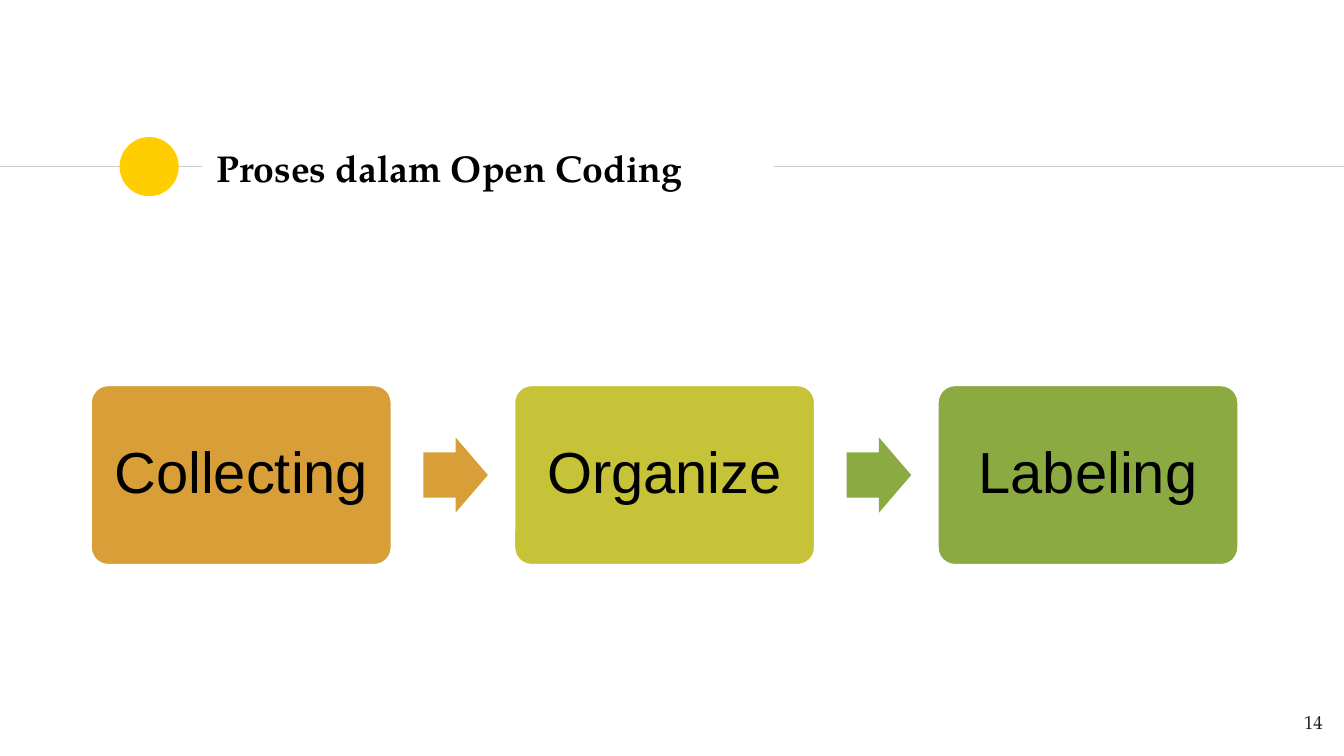
from lxml.etree import SubElement
from pptx import Presentation
from pptx.dml.color import RGBColor
from pptx.enum.shapes import MSO_CONNECTOR, MSO_SHAPE
from pptx.enum.text import MSO_ANCHOR, MSO_AUTO_SIZE, PP_ALIGN
from pptx.oxml.ns import qn
from pptx.util import Inches, Pt

BLACK = RGBColor(0x00, 0x00, 0x00)
INK = RGBColor(0x1D, 0x1D, 0x1B)
WHITE = RGBColor(0xFF, 0xFF, 0xFF)
RULE_GREY = RGBColor(0xCC, 0xCC, 0xCC)
YELLOW = RGBColor(0xFF, 0xCD, 0x00)
ORANGE = RGBColor(0xD8, 0x9F, 0x39)
LIME = RGBColor(0xC7, 0xC3, 0x38)
GREEN = RGBColor(0x8B, 0xAB, 0x42)

SERIF = "TeX Gyre Pagella"
SANS = "Arial"
SLIDE_WIDTH = 10
SLIDE_HEIGHT = SLIDE_WIDTH * 9 / 16
STEPS = [("Collecting", ORANGE), ("Organize", LIME), ("Labeling", GREEN)]
ARROW_COLORS = [ORANGE, GREEN]


def format_text(frame, text, font_name, size, color, align, anchor):
    frame.text = text
    frame.word_wrap = True
    frame.auto_size = MSO_AUTO_SIZE.NONE
    frame.vertical_anchor = anchor
    frame.margin_left = frame.margin_right = Inches(0.1)
    frame.margin_top = frame.margin_bottom = Inches(0.1)
    paragraph = frame.paragraphs[0]
    paragraph.alignment = align
    paragraph.font.name = font_name
    paragraph.font.size = Pt(size)
    paragraph.font.color.rgb = color
    return paragraph


def add_filled(slide, preset, left, top, width, height, color):
    shape = slide.shapes.add_shape(
        preset, Inches(left), Inches(top), Inches(width), Inches(height))
    shape.shadow.inherit = False
    shape.fill.solid()
    shape.fill.fore_color.rgb = color
    shape.line.fill.background()
    return shape


def add_rule(slide, start, end, y):
    rule = slide.shapes.add_connector(
        MSO_CONNECTOR.STRAIGHT, Inches(start), Inches(y), Inches(end), Inches(y))
    rule.line.color.rgb = RULE_GREY
    rule.line.width = Pt(0.75)
    SubElement(rule._element.spPr, qn("a:effectLst"))


def add_heading(slide, text, left, top, width, height):
    middle = top + height / 2 - 0.01
    right = left + width
    dot = 0.44
    add_rule(slide, 0, left - 0.01, middle)
    add_filled(slide, MSO_SHAPE.OVAL, left - 0.62, middle - dot / 2, dot, dot, YELLOW)
    add_rule(slide, right, SLIDE_WIDTH, middle)
    title = slide.shapes.title
    title.left, title.top = Inches(left), Inches(top)
    title.width, title.height = Inches(width), Inches(height)
    paragraph = format_text(title.text_frame, text, SERIF, 20, BLACK,
                            PP_ALIGN.LEFT, MSO_ANCHOR.MIDDLE)
    paragraph.font.bold = True


def add_process(slide, left, top, width, height):
    card_width = 2.25
    pitch = (width - card_width) / (len(STEPS) - 1)
    arrow_width, arrow_height = 0.48, 0.56
    for index, (label, color) in enumerate(STEPS):
        card = add_filled(slide, MSO_SHAPE.ROUNDED_RECTANGLE,
                          left + index * pitch, top, card_width, height, color)
        card.adjustments[0] = 0.1
        card.line.color.rgb = WHITE
        card.line.width = Pt(2)
        paragraph = format_text(card.text_frame, label, SANS, 31, BLACK,
                                PP_ALIGN.CENTER, MSO_ANCHOR.MIDDLE)
        paragraph.line_spacing = 0.9
    for index, color in enumerate(ARROW_COLORS):
        arrow = add_filled(slide, MSO_SHAPE.RIGHT_ARROW,
                           left + index * pitch + card_width + 0.23,
                           top + (height - arrow_height) / 2,
                           arrow_width, arrow_height, color)
        arrow.adjustments[0] = 0.6
        arrow.adjustments[1] = 0.5


def add_page_number(slide, number, left, top, width, height):
    page = slide.shapes.add_textbox(
        Inches(left), Inches(top), Inches(width), Inches(height))
    format_text(page.text_frame, number, SERIF, 10, INK,
                PP_ALIGN.RIGHT, MSO_ANCHOR.TOP)


def main():
    presentation = Presentation()
    presentation.slide_width = Inches(SLIDE_WIDTH)
    presentation.slide_height = Inches(SLIDE_HEIGHT)
    slide = presentation.slides.add_slide(presentation.slide_layouts[5])
    add_heading(slide, "Proses dalam Open Coding", 1.51, 1.01, 4.25, 0.48)
    add_process(slide, 0.67, 2.86, 8.55, 1.35)
    add_page_number(slide, "14", 9.34, 5.19, 0.6, 0.43)
    presentation.save("out.pptx")


if __name__ == "__main__":
    main()
